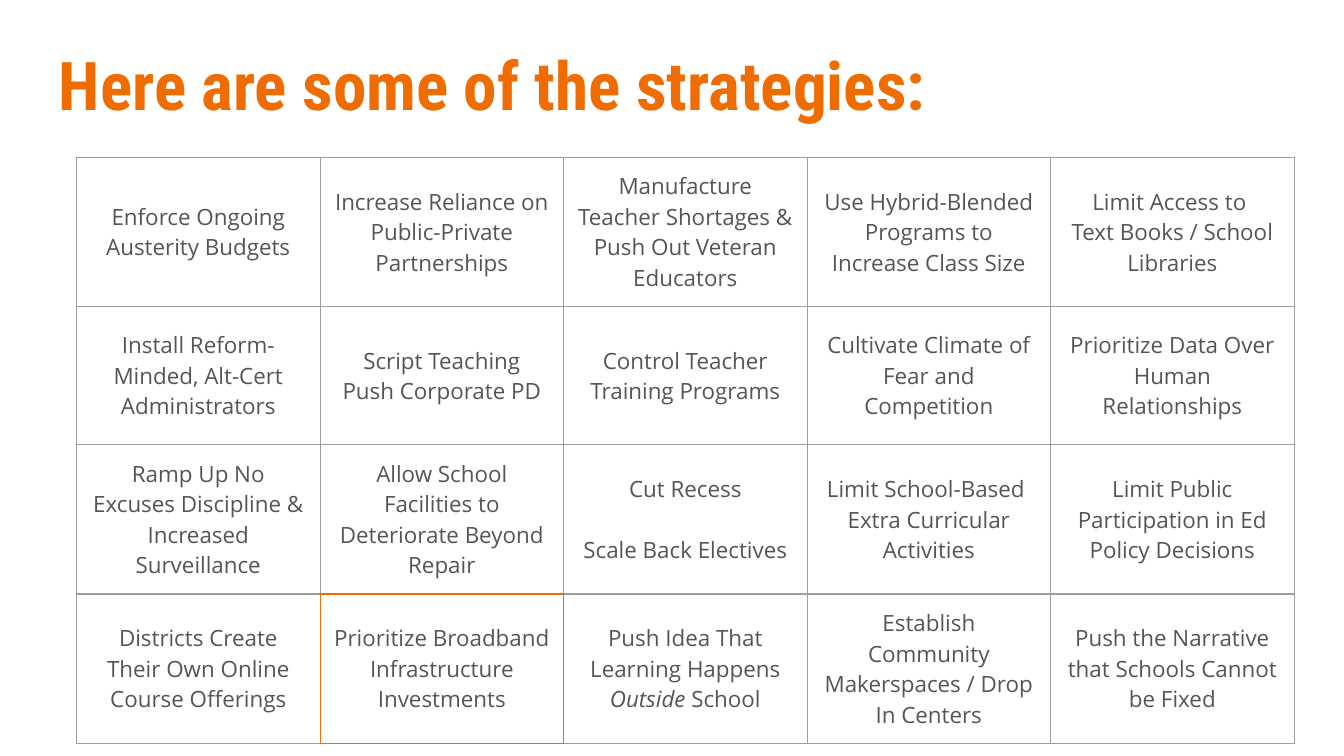
from lxml import etree
from pptx import Presentation
from pptx import util as u
from pptx.dml.color import RGBColor
from pptx.enum import text
from pptx.oxml.ns import qn

COLORS = {"accent": "EF6C00", "body": "555555", "grid": "9E9E9E"}
COLS, ROWS = 5, 4
TABLE_W = u.Inches(9.06)
TALL, SHORT = u.Inches(1.11), u.Inches(1.03)
ROW_HEIGHTS = [TALL, SHORT, TALL, TALL]
GAP = u.Pt(16.3)  # one line of body text

# Each cell is a list of paragraphs; *stars* mark italics.
STRATEGIES = [
    [["Enforce Ongoing Austerity Budgets"],
     ["Increase Reliance on Public-Private Partnerships"],
     ["Manufacture", "Teacher Shortages &", "Push Out Veteran Educators"],
     ["Use Hybrid-Blended Programs to Increase Class Size"],
     ["Limit Access to ", "Text Books / School Libraries"]],
    [["Install Reform-Minded, Alt-Cert Administrators"],
     ["Script Teaching", "Push Corporate PD"],
     ["Control Teacher Training Programs"],
     ["Cultivate Climate of Fear and Competition"],
     ["Prioritize Data Over Human Relationships"]],
    [["Ramp Up No Excuses Discipline & Increased Surveillance"],
     ["Allow School Facilities to Deteriorate Beyond Repair"],
     ["Cut Recess", "Scale Back Electives"],
     ["Limit School-Based ", "Extra Curricular Activities"],
     ["Limit Public Participation in Ed Policy Decisions"]],
    [["Districts Create Their Own Online Course Offerings"],
     ["Prioritize Broadband Infrastructure Investments"],
     ["Push Idea That Learning Happens *Outside* School"],
     ["Establish Community Makerspaces / Drop In Centers"],
     ["Push the Narrative that Schools Cannot be Fixed"]],
]
SPACED_CELL = (2, 2)
HIGHLIGHT = (3, 1)
# The highlighted cell and the neighbours' sides that touch it
ACCENT_SIDES = {HIGHLIGHT: "LRTB", (2, 1): "B", (3, 0): "R", (3, 2): "L"}


def style(r, font, size, color):
    r.font.name, r.font.size = font, u.Pt(size)
    r.font.color.rgb = RGBColor.from_string(COLORS[color])


def set_borders(cell, accent_sides):
    """Outline a cell; must run before the cell's fill is set."""
    tc_pr = cell._tc.get_or_add_tcPr()
    for side in "LRTB":
        ln = etree.SubElement(tc_pr, qn(f"a:ln{side}"), w=str(u.Pt(0.75)))
        fill = etree.SubElement(ln, qn("a:solidFill"))
        color = COLORS["accent" if side in accent_sides else "grid"]
        etree.SubElement(fill, qn("a:srgbClr"), val=color)


prs = Presentation()
prs.slide_width = u.Inches(10)
prs.slide_height = prs.slide_width * 9 // 16
s = prs.slides.add_slide(prs.slide_layouts[6])

title = s.shapes.add_textbox(u.Inches(0.34), u.Inches(0.22),
                             u.Inches(9.32), u.Inches(0.77))
tf = title.text_frame
tf.word_wrap = True
tf.margin_left = tf.margin_right = tf.margin_top = tf.margin_bottom = u.Inches(0.1)
tf.text = "Here are some of the strategies:"
r = tf.paragraphs[0].runs[0]
style(r, "Roboto Condensed", 36, "accent")
r.font.bold = True

table = s.shapes.add_table(ROWS, COLS, u.Inches(0.57), u.Inches(1.17),
                           TABLE_W, sum(ROW_HEIGHTS)).table
table.first_row = table.horz_banding = False
for col in table.columns:
    col.width = TABLE_W // COLS
for row, height in zip(table.rows, ROW_HEIGHTS):
    row.height = height

for i, row in enumerate(STRATEGIES):
    for j, lines in enumerate(row):
        cell = table.cell(i, j)
        set_borders(cell, ACCENT_SIDES.get((i, j), ""))
        cell.fill.background()
        cell.vertical_anchor = text.MSO_ANCHOR.MIDDLE
        cell.margin_left = cell.margin_right = u.Inches(0.1)
        cell.margin_top = cell.margin_bottom = u.Inches(0.1)
        tf = cell.text_frame
        for n, line in enumerate(lines):
            p = tf.add_paragraph() if n else tf.paragraphs[0]
            p.alignment = text.PP_ALIGN.CENTER
            if n and (i, j) == SPACED_CELL:
                p.space_before = GAP
            for k, part in enumerate(line.split("*")):
                r = p.add_run()
                r.text = part
                style(r, "Open Sans", 12, "body")
                if k % 2:
                    r.font.italic = True

prs.save("out.pptx")
